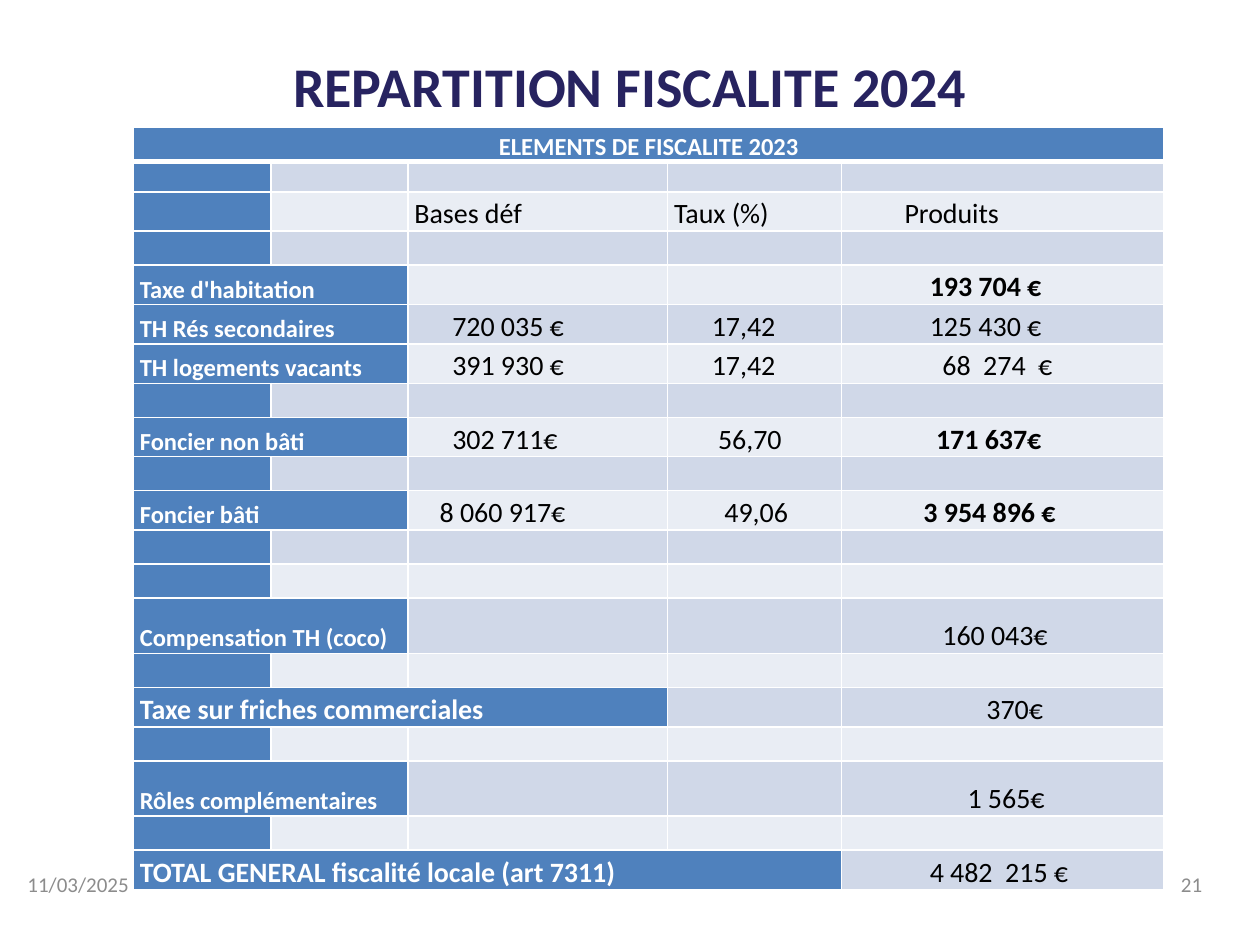
from pptx import Presentation
from pptx.dml.color import RGBColor
from pptx.enum.text import MSO_ANCHOR, PP_ALIGN
from pptx.oxml.ns import qn
from pptx.util import Inches, Pt
from lxml.etree import SubElement

FONT = "Calibri"
NAVY = RGBColor(0x27, 0x23, 0x60)
BLUE = RGBColor(0x4F, 0x81, 0xBD)
BAND_DARK = RGBColor(0xD0, 0xD8, 0xE8)
BAND_LIGHT = RGBColor(0xE9, 0xED, 0xF4)
WHITE = RGBColor(0xFF, 0xFF, 0xFF)
BLACK = RGBColor(0, 0, 0)
GREY = RGBColor(0x8C, 0x8C, 0x8C)

COLUMN_WIDTHS = [1.09, 1.09, 2.06, 1.38, 2.56]
HEADER, THIN, EMPTY, LINE, TALL = 0.26, 0.24, 0.27, 0.31, 0.44

# Row height, label, label span, label size, then column: (text, indent, bold)
BLANK = (EMPTY, "", 1, 14, {})
ROWS = [
    (HEADER, "ELEMENTS DE FISCALITE 2023", 5, 14, {}),
    (THIN, "", 1, 14, {}),
    (LINE, "", 1, 14, {2: ("Bases déf", 0, False), 3: ("Taux (%)", 0, False),
                       4: ("Produits", 0.45, False)}),
    BLANK,
    (LINE, "Taxe d'habitation", 2, 14, {4: ("193 704 €", 0.65, True)}),
    (LINE, "TH Rés secondaires", 2, 14,
     {2: ("720 035 €", 0.3, False), 3: ("17,42", 0.3, False), 4: ("125 430 €", 0.65, False)}),
    (LINE, "TH logements vacants", 2, 14,
     {2: ("391 930 €", 0.3, False), 3: ("17,42", 0.3, False), 4: ("68  274  €", 0.75, False)}),
    BLANK,
    (LINE, "Foncier non bâti", 2, 14,
     {2: ("302 711€", 0.3, False), 3: ("56,70", 0.35, False), 4: ("171 637€", 0.7, True)}),
    BLANK,
    (LINE, "Foncier bâti", 2, 14,
     {2: ("8 060 917€", 0.2, False), 3: ("49,06", 0.4, False), 4: ("3 954 896 €", 0.6, True)}),
    BLANK,
    BLANK,
    (TALL, "Compensation TH (coco)", 2, 14, {4: ("160 043€", 0.75, False)}),
    BLANK,
    (LINE, "Taxe sur friches commerciales", 3, 16, {4: ("370€", 1.1, False)}),
    BLANK,
    (TALL, "Rôles complémentaires", 2, 14, {4: ("1 565€", 0.95, False)}),
    BLANK,
    (LINE, "TOTAL GENERAL fiscalité locale (art 7311)", 4, 16,
     {4: ("4 482  215 €", 0.65, False)}),
]


def set_all(target, values):
    for name, value in values.items():
        setattr(target, name, value)


def write(para, text, size, color, bold=False):
    span = para.add_run()
    span.text = text
    set_all(span.font, {"name": FONT, "size": Pt(size), "bold": bold})
    span.font.color.rgb = color


def add_title(page, left, top, width, height):
    title = page.shapes.title
    set_all(title, {"left": left, "top": top, "width": width, "height": height})
    frame = title.text_frame
    frame.vertical_anchor = MSO_ANCHOR.MIDDLE
    para = frame.paragraphs[0]
    para.alignment = PP_ALIGN.CENTER
    write(para, "REPARTITION FISCALITE 2024", 32, NAVY, True)


def add_footer(page, left, top, width, height, text, align):
    box = page.shapes.add_textbox(left, top, width, height)
    set_all(box.text_frame, {"word_wrap": True, "vertical_anchor": MSO_ANCHOR.MIDDLE})
    para = box.text_frame.paragraphs[0]
    para.alignment = align
    write(para, text, 12, GREY)


def format_cell(cell, fill, row):
    """Give a cell its margins, white borders and fill."""
    set_all(cell, {"margin_left": Inches(0.05), "margin_right": Inches(0.05),
                   "margin_top": 0, "margin_bottom": 0,
                   "vertical_anchor": MSO_ANCHOR.BOTTOM})
    widths = {"a:lnL": 1, "a:lnR": 1, "a:lnT": 3 if row == 1 else 1,
              "a:lnB": 3 if row == 0 else 1}
    properties = cell._tc.get_or_add_tcPr()
    for tag, width in widths.items():
        line = SubElement(properties, qn(tag), w=str(Pt(width)))
        solid = SubElement(line, qn("a:solidFill"))
        SubElement(solid, qn("a:srgbClr"), val=str(WHITE))
    cell.fill.solid()
    cell.fill.fore_color.rgb = fill


def fill_cell(cell, text, size, color, bold, indent=0, align=None):
    para = cell.text_frame.paragraphs[0]
    if not text:
        # A small end mark keeps an empty row low
        SubElement(para._p, qn("a:endParaRPr"), sz="1000")
        return
    set_all(para, {"line_spacing": 1.15, "space_after": Pt(10), "alignment": align})
    if indent:
        para._p.get_or_add_pPr().set("marL", str(Inches(indent)))
    write(para, text, size, color, bold)


def add_tax_table(page, left, top, width, height):
    table = page.shapes.add_table(len(ROWS), len(COLUMN_WIDTHS),
                                  left, top, width, height).table
    for column, column_width in zip(table.columns, COLUMN_WIDTHS):
        column.width = Inches(column_width)
    for row, (row_height, label, span, size, values) in enumerate(ROWS):
        table.rows[row].height = Inches(row_height)
        band = BAND_DARK if row % 2 else BAND_LIGHT
        for column in range(len(COLUMN_WIDTHS)):
            cell = table.cell(row, column)
            format_cell(cell, BLUE if column < span else band, row)
            if column == 0:
                align = PP_ALIGN.CENTER if row == 0 else PP_ALIGN.LEFT
                fill_cell(cell, label, size, WHITE, True, align=align)
            else:
                text, indent, bold = values.get(column, ("", 0, False))
                fill_cell(cell, text, 16, BLACK, bold, indent)
        if span > 1:
            table.cell(row, 0).merge(table.cell(row, span - 1))


def main():
    deck = Presentation()
    set_all(deck, {"slide_width": Inches(10), "slide_height": Inches(7.5)})
    page = deck.slides.add_slide(deck.slide_layouts[5])
    add_title(page, 0, Inches(0.44), Inches(10), Inches(0.47))
    add_tax_table(page, Inches(1.06), Inches(1.01), Inches(8.19), Inches(6.01))
    # Date and page number
    for left, text, align in [(0.12, "11/03/2025", PP_ALIGN.LEFT),
                              (7.31, "21", PP_ALIGN.RIGHT)]:
        add_footer(page, Inches(left), Inches(6.82), Inches(2.33), Inches(0.4), text, align)
    deck.save("out.pptx")


if __name__ == "__main__":
    main()
